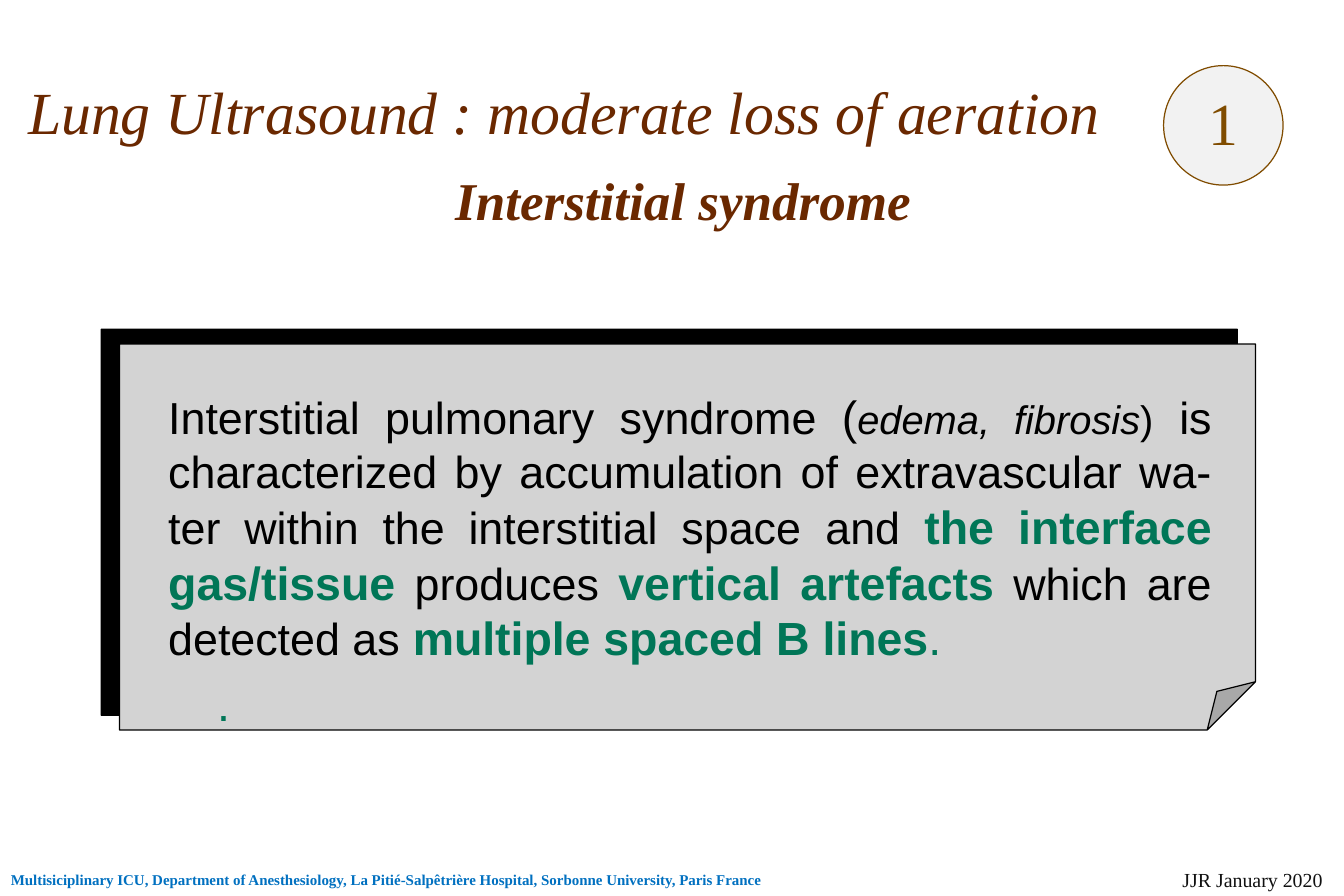
from lxml import etree
from pptx import Presentation
from pptx.dml.color import RGBColor
from pptx.enum.shapes import MSO_SHAPE
from pptx.enum.text import MSO_ANCHOR, PP_ALIGN
from pptx.oxml import parse_xml
from pptx.util import Inches, Pt

CENTER, JUSTIFY = PP_ALIGN.CENTER, PP_ALIGN.JUSTIFY
TOP, MIDDLE = MSO_ANCHOR.TOP, MSO_ANCHOR.MIDDLE
FOLDED, OVAL = MSO_SHAPE.FOLDED_CORNER, MSO_SHAPE.OVAL
BLACK = RGBColor(0x00, 0x00, 0x00)
NOTE_GRAY = RGBColor(0xD3, 0xD3, 0xD3)
BADGE_GRAY = RGBColor(0xF2, 0xF2, 0xF2)
BROWN = RGBColor(0x6A, 0x28, 0x00)
BADGE_BROWN = RGBColor(0x80, 0x4C, 0x00)
GREEN = RGBColor(0x00, 0x76, 0x57)
BLUE = RGBColor(0x00, 0x70, 0xC0)
INK = RGBColor(0x11, 0x11, 0x11)
SERIF, SANS = "Times New Roman", "Arial"

deck = Presentation()
deck.slide_width, deck.slide_height = Inches(11.25), Inches(7.5)
page = deck.slides.add_slide(deck.slide_layouts[5])


def percent(left, top, width, height):
    across, down = deck.slide_width / 100, deck.slide_height / 100
    return int(left * across), int(top * down), int(width * across), int(height * down)


def add_span(para, text, name, size, color, bold=False, italic=False):
    span = para.add_run()
    span.text = text
    span.font.color.rgb = color
    style = {"name": name, "size": Pt(size), "bold": bold, "italic": italic}
    for key, value in style.items():
        setattr(span.font, key, value)


shapes = {}
for label, kind, area, fill, line in [
    ("note", FOLDED, (8.89, 38.4, 84.53, 43.07), NOTE_GRAY, BLACK),
    ("badge", OVAL, (86.58, 7.33, 8.89, 13.33), BADGE_GRAY, BADGE_BROWN),
]:
    shape = page.shapes.add_shape(kind, *percent(*area))
    shape.shadow.inherit = False
    shape.fill.solid()
    shape.fill.fore_color.rgb = fill
    shape.line.color.rgb = line
    shape.line.width = Pt(0.75)
    shapes[label] = shape

properties = shapes["note"].element.spPr
effects = properties.find("{*}effectLst")
namespace = etree.QName(effects).namespace
fold = properties.find("{*}prstGeom/{*}avLst")
for guide in list(fold):
    fold.remove(guide)
etree.SubElement(fold, f"{{{namespace}}}gd", name="adj", fmla="val 12500")
effects.append(parse_xml(
    f'<a:outerShdw xmlns:a="{namespace}" dist="{Pt(14.2)}" dir="{219 * 60000}" '
    'algn="ctr" rotWithShape="0"><a:srgbClr val="000000"/></a:outerShdw>'))

title = page.shapes.title
title.left, title.top, title.width, title.height = percent(28.8, 16.4, 44.09, 11.6)

labels = [
    (title, MIDDLE, "Interstitial syndrome", 32, BROWN, True, True),
]
for area, anchor, *text_style in [
    ((-0.53, 4, 84.98, 16.67), MIDDLE,
     "Lung Ultrasound : moderate loss of aeration", 36, BROWN, False, True),
    ((86.84, 8.93, 8.36, 9.47), TOP, "1", 36, BADGE_BROWN, False, False),
    ((-0.36, 96.53, 58.13, 3.33), TOP,
     "Multisiciplinary ICU, Department of Anesthesiology, La Pitié-Salpêtrière "
     "Hospital, Sorbonne University, Paris France", 9, BLUE, True, False),
    ((85.87, 96.13, 14.67, 4), TOP, "JJR January 2020", 12, INK, False, False),
]:
    labels.append((page.shapes.add_textbox(*percent(*area)), anchor, *text_style))

for box, anchor, text, size, color, bold, italic in labels:
    box.text_frame.word_wrap = True
    box.text_frame.vertical_anchor = anchor
    para = box.text_frame.paragraphs[0]
    para.alignment = CENTER
    add_span(para, text, SERIF, size, color, bold, italic)

definition = page.shapes.add_textbox(*percent(10.84, 42.67, 80.18, 35.87)).text_frame
definition.word_wrap = True
for para, margin, indent, spans in [
    (definition.paragraphs[0], 0.09, 0, [
        ("Interstitial pulmonary syndrome ", 27, BLACK),
        ("(", 28, BLACK),
        ("edema, fibrosis", 24, BLACK, False, True),
        (")", 24, BLACK),
        (" ", 28, BLACK),
        ("is characterized by accumulation of extravascular wa-ter "
         "within the interstitial space", 27, BLACK),
        (" ", 28, BLACK),
        ("and", 27, BLACK),
        (" ", 28, BLACK),
        ("the interface gas/tissue ", 28, GREEN, True),
        ("produces", 27, BLACK),
        (" ", 28, BLACK),
        ("vertical artefacts ", 28, GREEN, True),
        ("which are detected as", 27, BLACK),
        (" ", 28, BLACK),
        ("multiple spaced B lines", 28, GREEN, True),
        (".", 28, GREEN),
    ]),
    (definition.add_paragraph(), 0.49, 0.01, [(".", 28, GREEN)]),
]:
    para.alignment = JUSTIFY
    para.space_before = Pt(6)
    layout = para._p.get_or_add_pPr()
    layout.set("marL", str(Inches(margin)))
    layout.set("indent", str(Inches(indent)))
    for text, *style in spans:
        add_span(para, text, SANS, *style)

deck.save("out.pptx")
